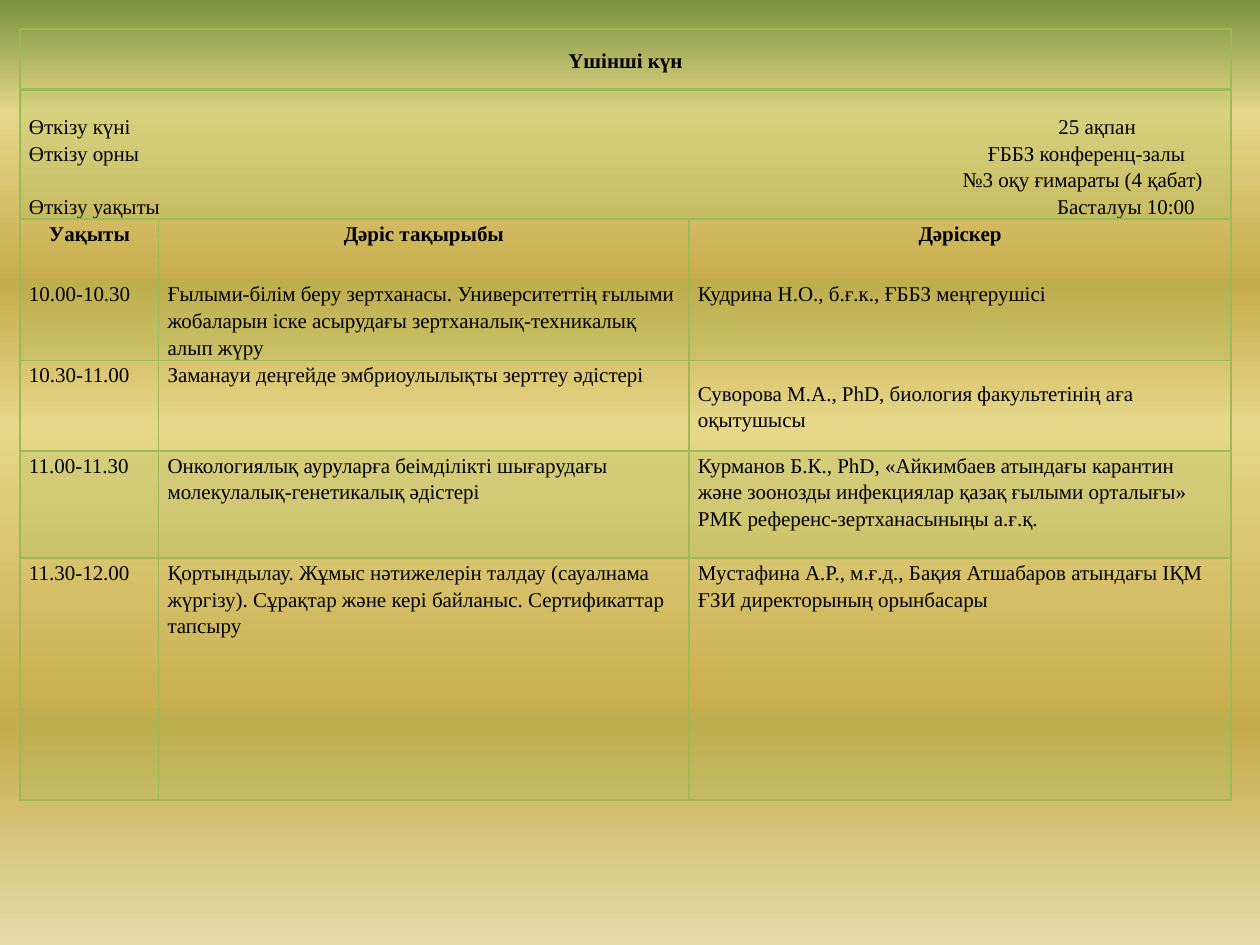
import pptx
import pptx.util
import pptx.dml.color
import pptx.enum.text
import pptx.oxml
import pptx.oxml.ns
from lxml import etree

FONT = "Times New Roman"
BLACK, GREEN = "000000", "9BBB59"
BACKGROUND_STOPS = [(0, "77933C"), (12, "E6D78A"), (30, "C7AC4C"),
                    (45, "E6D78A"), (77, "C7AC4C"), (100, "E6DCAC")]
COLUMN_WIDTHS = [1.1, 4.21, 4.3]
ROW_HEIGHTS = [0.48, 1.03, 0.48, 0.64, 0.72, 0.85, 1.2, 0.72]
BANDED_ROWS = (1, 3, 5, 7)

DAY_TITLE = "Үшінші күн"
# Label, value, and the value's distance from the left text edge in inches
DETAILS = [
    ("Өткізу күні", "25 ақпан", 8.17),
    ("Өткізу орны", "ҒББЗ конференц-залы", 7.61),
    ("", "№3 оқу ғимараты (4 қабат)", 7.41),
    ("Өткізу уақыты", "Басталуы 10:00", 8.16),
]
HEADINGS = ("Уақыты", "Дәріс тақырыбы", "Дәріскер")
LECTURES = [
    ("10.00-10.30",
     "Ғылыми-білім беру зертханасы. Университеттің ғылыми жобаларын іске "
     "асырудағы зертханалық-техникалық алып жүру",
     "Кудрина Н.О., б.ғ.к., ҒББЗ меңгерушісі"),
    ("10.30-11.00",
     "Заманауи деңгейде эмбриоулылықты зерттеу әдістері",
     "Суворова М.А., PhD, биология факультетінің аға оқытушысы"),
    ("11.00-11.30",
     "Онкологиялық ауруларға беімділікті шығарудағы молекулалық-генетикалық "
     "әдістері",
     "Курманов Б.К., PhD, «Айкимбаев атындағы карантин және зоонозды "
     "инфекциялар қазақ ғылыми орталығы» РМК референс-зертханасыныңы а.ғ.қ."),
    ("11.30-12.00",
     "Қортындылау. Жұмыс нәтижелерін талдау (сауалнама жүргізу). Сұрақтар "
     "және кері байланыс. Сертификаттар тапсыру",
     "Мустафина А.Р., м.ғ.д., Бақия Атшабаров атындағы ІҚМ ҒЗИ директорының "
     "орынбасары"),
]
ANCHOR = pptx.enum.text.MSO_ANCHOR
CENTER = pptx.enum.text.PP_ALIGN.CENTER


def color(hex_string):
    return pptx.dml.color.RGBColor.from_string(hex_string)


def add_child(parent, tag, **attributes):
    child = etree.SubElement(parent, pptx.oxml.ns.qn(tag))
    for name, value in attributes.items():
        child.set(name, str(value))
    return child


def paint_background(slide):
    fill = slide.background.fill
    fill.gradient()
    fill.gradient_angle = 270
    stops = slide.element.find(".//" + pptx.oxml.ns.qn("a:gsLst"))
    for stop in list(stops):
        stops.remove(stop)
    for percent, hex_string in BACKGROUND_STOPS:
        stop = add_child(stops, "a:gs", pos=percent * 1000)
        add_child(stop, "a:srgbClr", val=hex_string)


def format_paragraph(paragraph, bold=False, alignment=None):
    paragraph.line_spacing = 1.15
    paragraph.alignment = alignment
    font = paragraph.font
    font.name, font.size, font.bold = FONT, pptx.util.Pt(12), bold
    font.color.rgb = color(BLACK)


def style_cell(cell, row):
    """Set margins, borders and the translucent band of one cell."""
    cell.margin_left = cell.margin_right = pptx.util.Inches(0.07)
    cell.margin_top = cell.margin_bottom = 0
    properties = cell._tc.get_or_add_tcPr()
    for side in "LRTB":
        thick = (side == "B" and row == 0) or (side == "T" and row == 1)
        line = add_child(properties, f"a:ln{side}", w=pptx.util.Pt(2 if thick else 1))
        add_child(add_child(line, "a:solidFill"), "a:srgbClr", val=GREEN)
    if row in BANDED_ROWS:
        cell.fill.solid()
        cell.fill.fore_color.rgb = color(GREEN)
        band = properties.find(pptx.oxml.ns.qn("a:solidFill"))
        add_child(band[0], "a:alpha", val=20000)
    else:
        cell.fill.background()


def write_cell(cell, text, anchor=ANCHOR.TOP, **formatting):
    cell.text = text
    cell.vertical_anchor = anchor
    format_paragraph(cell.text_frame.paragraphs[0], **formatting)


def write_details(cell):
    """Write label and value pairs, each value placed by a tab stop."""
    cell.vertical_anchor = ANCHOR.BOTTOM
    cell.text = "\n".join(f"{label}\t{value}" for label, value, _ in DETAILS)
    for paragraph, (_, _, position) in zip(cell.text_frame.paragraphs, DETAILS):
        format_paragraph(paragraph)
        properties = paragraph._p.get_or_add_pPr()
        tabs = pptx.oxml.parse_xml(
            f'<a:tabLst {pptx.oxml.ns.nsdecls("a")}>'
            f'<a:tab pos="{pptx.util.Inches(position)}" algn="l"/></a:tabLst>')
        properties.find(pptx.oxml.ns.qn("a:lnSpc")).addnext(tabs)


def add_schedule(slide, left, top):
    frame = slide.shapes.add_table(
        len(ROW_HEIGHTS), len(COLUMN_WIDTHS), left, top,
        pptx.util.Inches(sum(COLUMN_WIDTHS)), pptx.util.Inches(sum(ROW_HEIGHTS)))
    table = frame.table
    table.first_row = table.horz_banding = False
    for column, width in zip(table.columns, COLUMN_WIDTHS):
        column.width = pptx.util.Inches(width)
    for index, (row, height) in enumerate(zip(table.rows, ROW_HEIGHTS)):
        row.height = pptx.util.Inches(height)
        for cell in row.cells:
            style_cell(cell, index)

    # Full-width title and event details
    for row in (0, 1):
        table.cell(row, 0).merge(table.cell(row, len(COLUMN_WIDTHS) - 1))
    write_cell(table.cell(0, 0), DAY_TITLE, ANCHOR.MIDDLE, bold=True, alignment=CENTER)
    write_details(table.cell(1, 0))

    # Column headings and lectures
    for column, heading in enumerate(HEADINGS):
        write_cell(table.cell(2, column), heading, bold=True, alignment=CENTER)
    for row, lecture in enumerate(LECTURES, start=3):
        for column, text in enumerate(lecture):
            write_cell(table.cell(row, column), text)
    table.cell(4, 2).vertical_anchor = ANCHOR.MIDDLE


def main():
    presentation = pptx.Presentation()
    presentation.slide_width = pptx.util.Inches(10)
    presentation.slide_height = pptx.util.Inches(7.5)
    slide = presentation.slides.add_slide(presentation.slide_layouts[6])
    paint_background(slide)
    add_schedule(slide, pptx.util.Inches(0.16), pptx.util.Inches(0.23))
    presentation.save("out.pptx")


if __name__ == "__main__":
    main()
